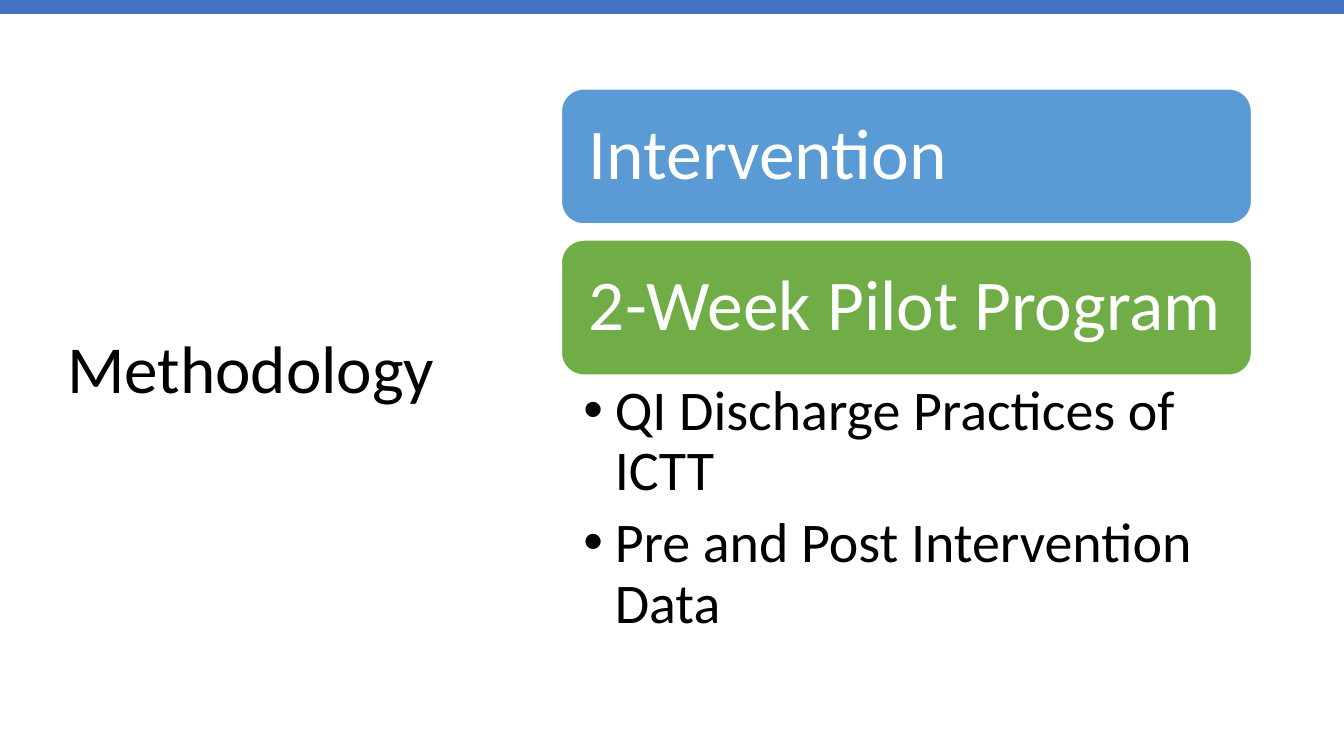
from lxml.etree import SubElement
from pptx import Presentation
from pptx.dml.color import RGBColor as RGB
from pptx.enum.shapes import MSO_SHAPE as Shape
from pptx.enum.text import MSO_ANCHOR as Anchor, PP_ALIGN as Align
from pptx.oxml.ns import qn
from pptx.util import Pt

COLORS = {"bar": "4472C4", "blue": "5B9BD5", "green": "70AD47",
          "white": "FFFFFF", "black": "000000"}

deck = Presentation()
deck.slide_width, deck.slide_height = Pt(960), Pt(540)
slide = deck.slides.add_slide(deck.slide_layouts[6])


def write(shape, lines, size, color="black", anchor=Anchor.MIDDLE,
          pad=(7.2, 3.6, 7.2, 3.6), after=0, indent=0):
    """Fill a shape with paragraphs; a nonzero indent makes them bullets."""
    frame = shape.text_frame
    frame.word_wrap = True
    frame.vertical_anchor = anchor
    (frame.margin_left, frame.margin_top,
     frame.margin_right, frame.margin_bottom) = map(Pt, pad)
    for i, line in enumerate(lines):
        para = frame.add_paragraph() if i else frame.paragraphs[0]
        para.alignment = Align.LEFT
        para.line_spacing = 0.9
        para.space_after = Pt(after)
        run = para.add_run()
        run.text = line
        run.font.name = "Calibri"
        run.font.size = Pt(size)
        run.font.color.rgb = RGB.from_string(COLORS[color])
        if indent:
            props = para._p.get_or_add_pPr()
            props.set("marL", str(Pt(indent)))
            props.set("indent", str(-Pt(indent)))
            SubElement(props, qn("a:buFont")).set("typeface", "Arial")
            SubElement(props, qn("a:buChar")).set("char", "•")


def block(kind, left, top, width, height, fill):
    """Add a filled shape without shadow or outline."""
    shape = slide.shapes.add_shape(kind, Pt(left), Pt(top), Pt(width), Pt(height))
    shape.shadow.inherit = False
    shape.fill.solid()
    shape.fill.fore_color.rgb = RGB.from_string(COLORS[fill])
    shape.line.fill.background()
    return shape


# Title
title = slide.shapes.add_textbox(Pt(41), Pt(49), Pt(299.5), Pt(433.5))
write(title, ["Methodology"], 48)

# Top bar
block(Shape.RECTANGLE, 0, 0, 960, 10, "bar")

# Cards
LEFT, TOP, WIDTH, HEIGHT, STEP = 401, 63.5, 493, 96.5, 108
cards = [("Intervention", "blue"), ("2-Week Pilot Program", "green")]
for i, (label, fill) in enumerate(cards):
    card = block(Shape.ROUNDED_RECTANGLE, LEFT, TOP + i * STEP, WIDTH, HEIGHT, fill)
    card.line.color.rgb = RGB.from_string(COLORS["white"])
    card.line.width = Pt(1)
    write(card, [label], 51, "white", pad=(15, 15, 15, 15))

# Bullets below the last card
notes = slide.shapes.add_textbox(Pt(LEFT), Pt(TOP + STEP + HEIGHT), Pt(WIDTH), Pt(199.5))
write(notes, ["QI Discharge Practices of ICTT", "Pre and Post Intervention Data"], 40,
      anchor=Anchor.TOP, pad=(15.7, 5, 28.5, 5), after=8, indent=22.5)

deck.save("out.pptx")
